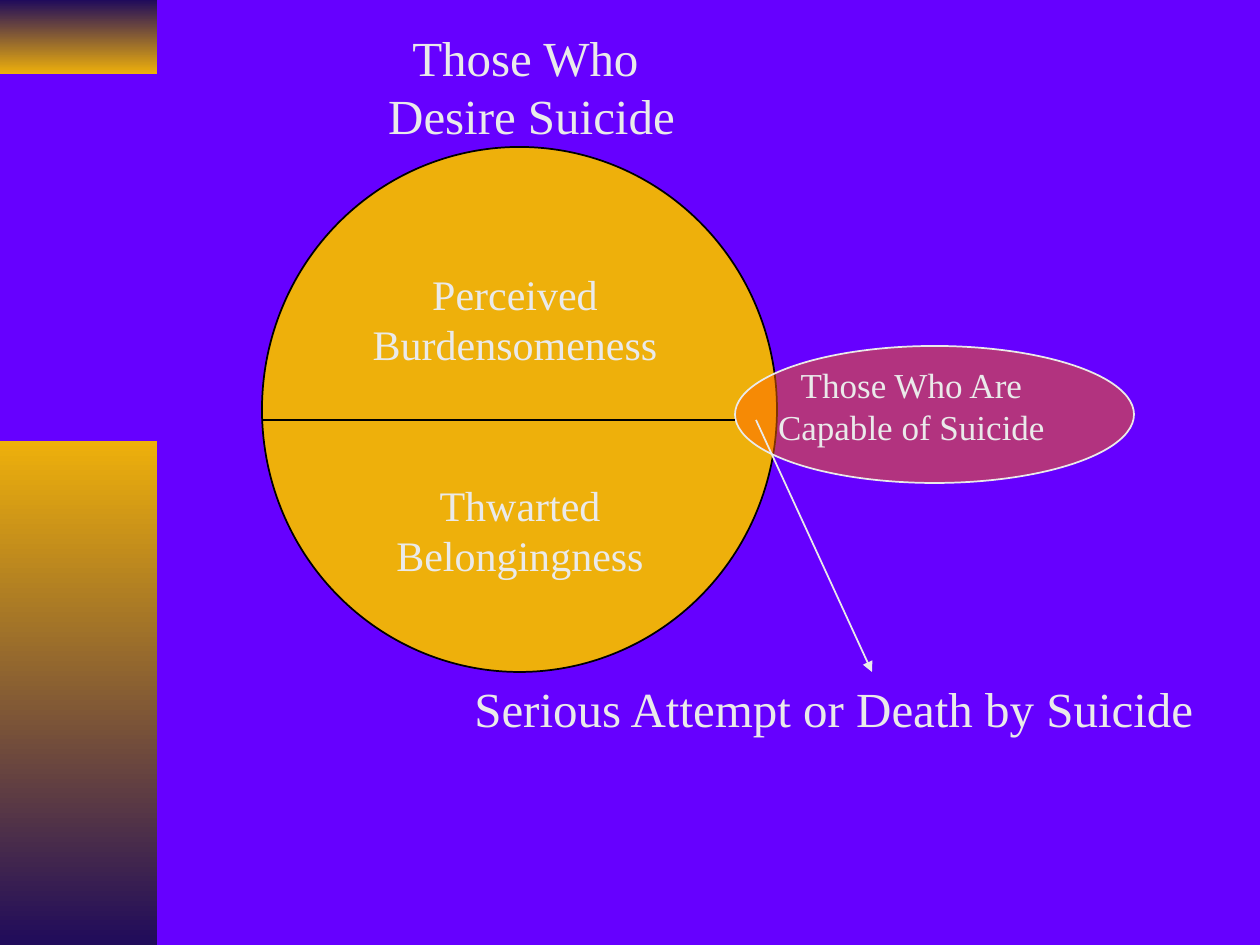
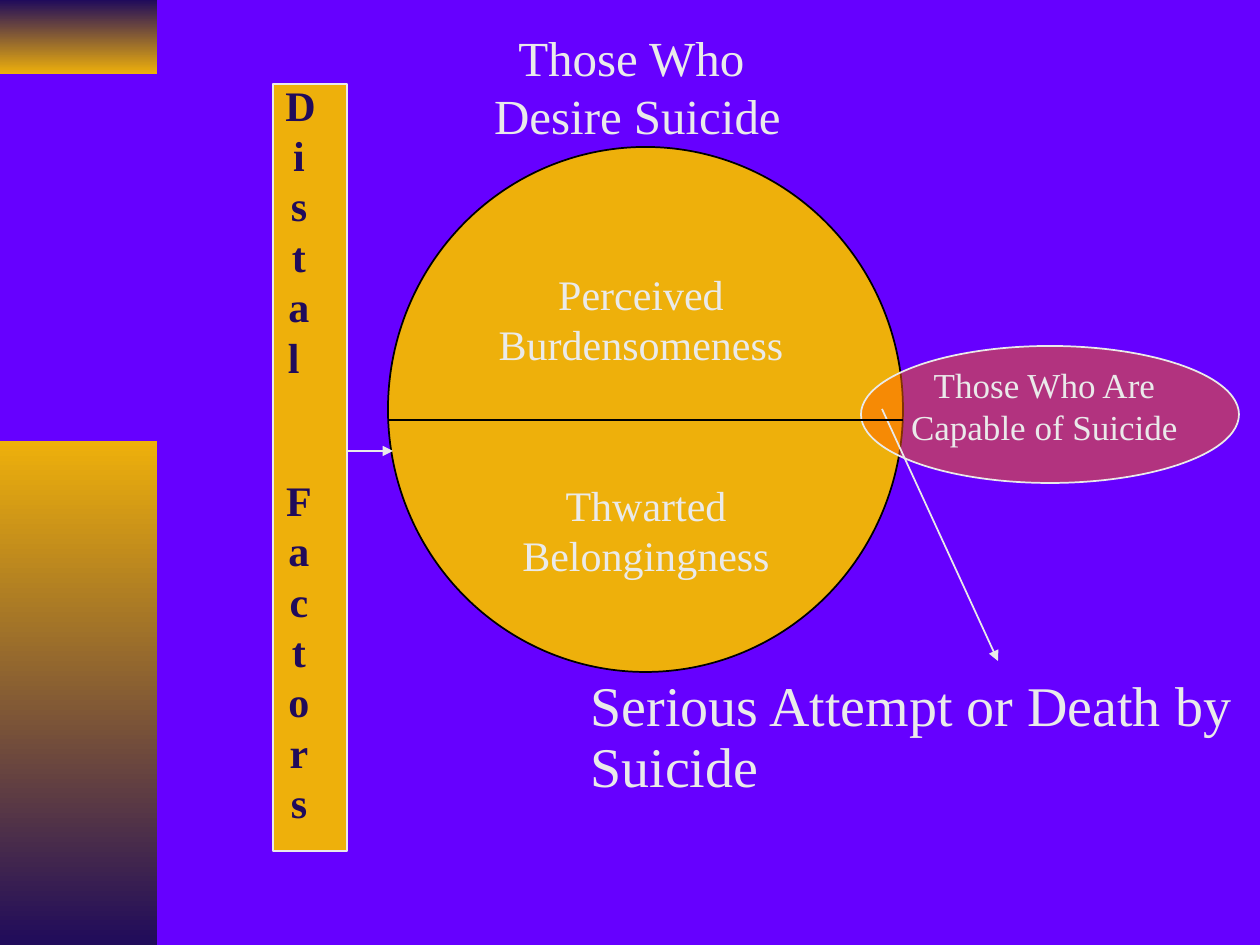
from collections import namedtuple

from lxml.etree import SubElement
from pptx import Presentation
from pptx.dml.color import RGBColor
from pptx.enum.shapes import MSO_CONNECTOR as CONNECTOR, MSO_SHAPE as SHAPE
from pptx.enum.text import PP_ALIGN as ALIGN
from pptx.oxml.ns import qn
from pptx.util import Emu, Pt

EMU_PER_PX = 914400 / 126
FONT = "Times New Roman"
COLORS = {
    "background": "6600FF",
    "gold": "EEB00B",
    "navy": "200B5B",
    "orange": "FF6600",
    "light": "EAEAEA",
    "black": "000000",
}

Box = namedtuple("Box", "left top width height")


def px(length):
    return Emu(round(length * EMU_PER_PX))


def color(name):
    return RGBColor.from_string(COLORS[name])


def inside(box, left, top, width, height):
    """A box placed relative to the corner of another one."""
    return Box(box.left + left, box.top + top, width, height)


def add_text(page, box, lines, size=24, ink="light", bold=False, align=ALIGN.CENTER,
             line_spacing=None, gap=0, right_indents=()):
    frame = page.shapes.add_textbox(*map(px, box)).text_frame
    frame.word_wrap = True
    for index, line in enumerate(lines):
        para = frame.add_paragraph() if index else frame.paragraphs[0]
        para.alignment = align
        if line_spacing:
            para.line_spacing = line_spacing
        if index and gap:
            para.space_before = Pt(gap)
        if index < len(right_indents):
            para._p.get_or_add_pPr().set("marR", str(px(right_indents[index])))
        span = para.add_run()
        span.text = line
        span.font.name = FONT
        span.font.size = Pt(size)
        span.font.bold = bold
        span.font.color.rgb = color(ink)


def add_figure(page, kind, box, fill, outline, opacity=100):
    figure = page.shapes.add_shape(kind, *map(px, box))
    figure.shadow.inherit = False
    figure.fill.solid()
    figure.fill.fore_color.rgb = color(fill)
    figure.line.color.rgb = color(outline)
    figure.line.width = Pt(1)
    if opacity < 100:
        tint = figure._element.spPr.find(qn("a:solidFill")).find(qn("a:srgbClr"))
        SubElement(tint, qn("a:alpha"), val=str(opacity * 1000))


def add_line(page, start, end, ink, arrow=False):
    line = page.shapes.add_connector(CONNECTOR.STRAIGHT, *map(px, start + end))
    line.line.color.rgb = color(ink)
    line.line.width = Pt(1)
    if arrow:
        SubElement(line.line._get_or_add_ln(), qn("a:tailEnd"), type="triangle")
    SubElement(line._element.spPr, qn("a:effectLst"))


def add_side_bands(page):
    bands = [(Box(0, 0, 157, 74), ("navy", "gold")),
             (Box(0, 441, 157, 504), ("gold", "navy"))]
    for box, stops in bands:
        band = page.shapes.add_shape(SHAPE.RECTANGLE, *map(px, box))
        band.shadow.inherit = False
        band.line.fill.background()
        band.fill.gradient()
        band.fill.gradient_angle = 270
        for stop, name in zip(band.fill.gradient_stops, stops):
            stop.color.rgb = color(name)


def add_desire_circle(page, circle, title_shift, divider_length):
    """Circle with its heading and two halves."""
    middle = circle.top + 273
    add_line(page, (circle.left, middle), (circle.left + divider_length, middle), "black")
    add_text(page, inside(circle, title_shift, -126, 413, 130),
             ["Those Who ", "Desire Suicide"], size=28)
    add_text(page, inside(circle, 85, 115, 336, 113), ["Perceived", "Burdensomeness"])
    add_text(page, inside(circle, 116, 326, 284, 113), ["Thwarted", "Belongingness"])


def add_overlap(page, circle, ellipse_width, label_shift, arrow_top):
    """Capability ellipse and the arrow leaving the overlap."""
    add_figure(page, SHAPE.OVAL, inside(circle, 473, 199, ellipse_width, 137),
               "orange", "light", opacity=50)
    start = (circle.left + 494, circle.top + arrow_top)
    add_line(page, start, (start[0] + 116, start[1] + 252), "light", arrow=True)
    add_text(page, inside(circle, label_shift, 210, 413, 97),
             ["Those Who Are", "Capable of Suicide"], size=20, right_indents=(18,))


def add_outcome(page, box, size, line_spacing=None):
    add_text(page, box, ["Serious Attempt or Death by Suicide"], size=size,
             align=ALIGN.LEFT, line_spacing=line_spacing)


def add_distal_bar(page, bar):
    """Narrow bar whose label wraps to one letter a line."""
    add_figure(page, SHAPE.RECTANGLE, bar, "gold", "light")
    right, arrow_y = bar.left + bar.width, bar.top + 367
    add_line(page, (right, arrow_y), (right + 46, arrow_y), "light", arrow=True)
    add_text(page, inside(bar, 0, -11, 52, 767), ["Distal ", "Factors"],
             ink="navy", bold=True, gap=53)


def add_model_page(deck, circle, title_shift, divider_length, **overlap):
    page = deck.slides.add_slide(deck.slide_layouts[6])
    add_side_bands(page)
    add_figure(page, SHAPE.OVAL, circle, "gold", "black")
    add_overlap(page, circle, **overlap)
    add_desire_circle(page, circle, title_shift, divider_length)
    return page


def main():
    deck = Presentation()
    deck.slide_width, deck.slide_height = px(1260), px(945)
    backdrop = deck.slide_master.background.fill
    backdrop.solid()
    backdrop.fore_color.rgb = color("background")

    # Model alone
    page = add_model_page(deck, Box(262, 147, 515, 525), title_shift=63, divider_length=473,
                          ellipse_width=399, label_shift=452, arrow_top=273)
    add_outcome(page, Box(462, 672, 756, 84), size=28)

    # Model with distal factors
    page = add_model_page(deck, Box(388, 147, 515, 525), title_shift=43, divider_length=515,
                          ellipse_width=378, label_shift=459, arrow_top=262)
    add_outcome(page, Box(578, 672, 682, 136), size=32, line_spacing=0.9)
    add_distal_bar(page, Box(273, 84, 74, 767))

    deck.save("out.pptx")


if __name__ == "__main__":
    main()
